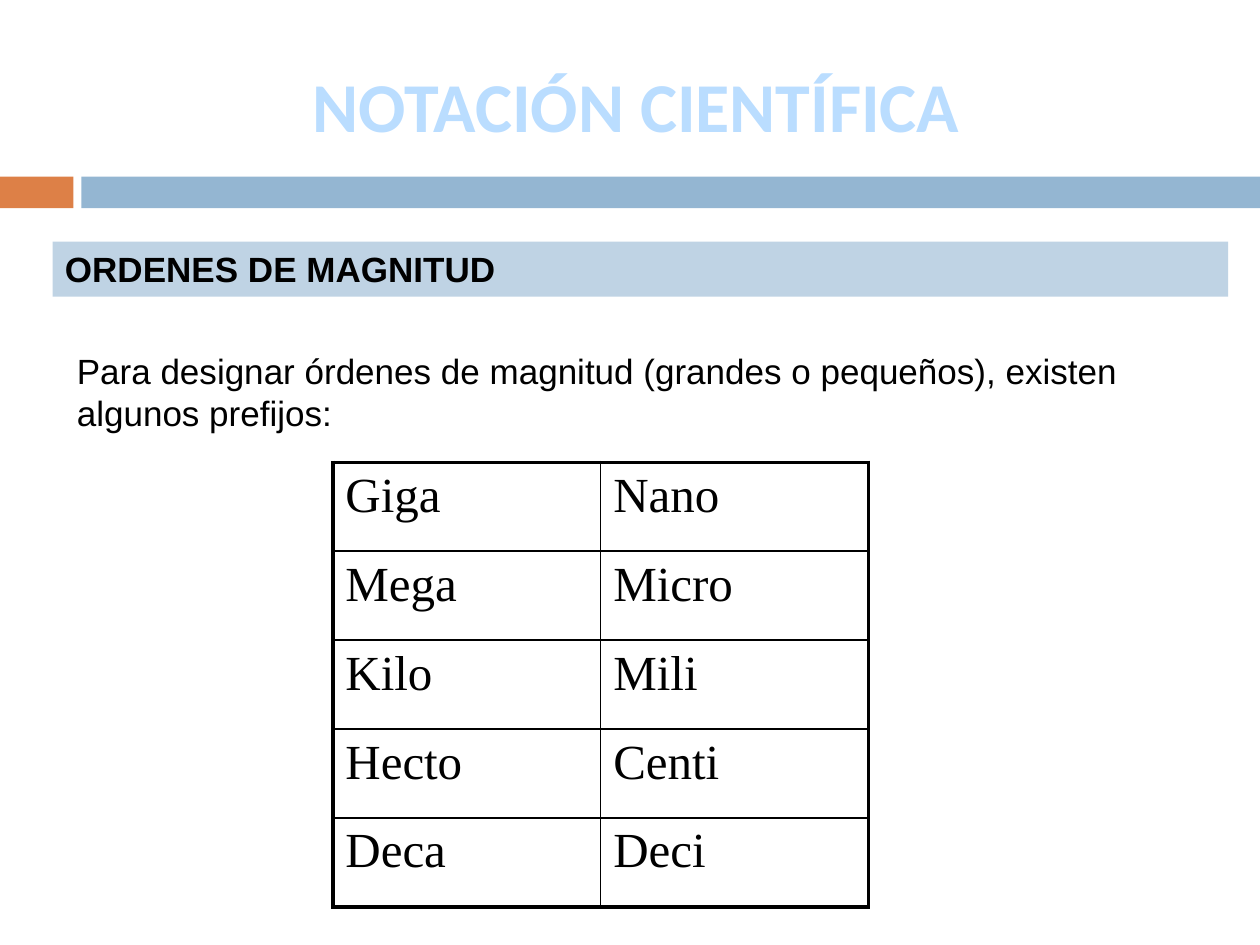
from lxml import etree
from pptx import Presentation
from pptx.dml.color import RGBColor
from pptx.enum.shapes import MSO_SHAPE
from pptx.enum.text import MSO_ANCHOR, PP_ALIGN
from pptx.oxml.ns import qn
from pptx.util import Cm, Pt

RECT = MSO_SHAPE.RECTANGLE
LEFT, CENTER = PP_ALIGN.LEFT, PP_ALIGN.CENTER
TOP, MIDDLE = MSO_ANCHOR.TOP, MSO_ANCHOR.MIDDLE

BLACK = RGBColor(0x00, 0x00, 0x00)
WHITE = RGBColor(0xFF, 0xFF, 0xFF)
ORANGE = RGBColor(0xDD, 0x80, 0x47)
BLUE = RGBColor(0x94, 0xB6, 0xD2)
PALE = RGBColor(0xBF, 0xD3, 0xE4)
SKY = RGBColor(0xBA, 0xDD, 0xFF)

# left, top, width, height in cm
BARS = [
    ((0, 3.56, 1.48, 0.64), ORANGE),
    ((1.64, 3.56, 23.76, 0.64), BLUE),
]
TITLE_FONT = {"name": "Calibri", "size": Pt(40), "bold": True}
HEAD_FONT = {"name": "Arial", "size": Pt(20), "bold": True}
BODY_FONT = {"name": "Arial", "size": Pt(20)}
CELL_FONT = {"name": "Times New Roman", "size": Pt(28)}
TEXTS = [
    ("NOTACIÓN CIENTÍFICA", (1.5, 0.74, 22.65, 2.74),
     TITLE_FONT, SKY, None, CENTER, MIDDLE),
    ("ORDENES DE MAGNITUD", (1.06, 4.87, 23.7, 1.11),
     HEAD_FONT, BLACK, PALE, LEFT, TOP),
    ("Para designar órdenes de magnitud (grandes o pequeños), "
     "existen algunos prefijos:", (1.3, 6.93, 23.01, 1.96),
     BODY_FONT, BLACK, WHITE, LEFT, TOP),
]
PREFIXES = [
    ("Giga", "Nano"),
    ("Mega", "Micro"),
    ("Kilo", "Mili"),
    ("Hecto", "Centi"),
    ("Deca", "Deci"),
]
GRID = (6.71, 9.32, 10.8, 8.96)
THICK, THIN = Pt(2.25), Pt(1)


def style(para, font, color):
    for key, value in font.items():
        setattr(para.font, key, value)
    para.font.color.rgb = color


def add_bar(slide, box, fill):
    bar = slide.shapes.add_shape(RECT, *map(Cm, box))
    bar.shadow.inherit = False
    bar.fill.solid()
    bar.fill.fore_color.rgb = fill
    bar.line.fill.background()


def add_text(slide, text, box, font, color, fill, align, anchor):
    shape = slide.shapes.add_textbox(*map(Cm, box))
    if fill is not None:
        shape.fill.solid()
        shape.fill.fore_color.rgb = fill
    frame = shape.text_frame
    frame.word_wrap = True
    frame.vertical_anchor = anchor
    frame.text = text
    para = frame.paragraphs[0]
    para.alignment = align
    style(para, font, color)


def add_edges(cell, widths):
    """Draw the cell borders; they must stand before the fill in the XML."""
    props = cell._tc.get_or_add_tcPr()
    for spot, (tag, width) in enumerate(widths.items()):
        line = etree.Element(qn("a:" + tag), w=str(width))
        fill = etree.SubElement(line, qn("a:solidFill"))
        etree.SubElement(fill, qn("a:srgbClr"), val=str(BLACK))
        props.insert(spot, line)


def add_grid(slide, rows, box):
    count, wide = len(rows), len(rows[0])
    left, top, width, height = map(Cm, box)
    table = slide.shapes.add_table(
        count, wide, left, top, width, height).table
    for row in table.rows:
        row.height = height // count
    for r, words in enumerate(rows):
        for c, word in enumerate(words):
            cell = table.cell(r, c)
            cell.text = word
            style(cell.text_frame.paragraphs[0], CELL_FONT, BLACK)
            cell.fill.solid()
            cell.fill.fore_color.rgb = WHITE
            outer = {"lnL": c == 0, "lnR": c == wide - 1,
                     "lnT": r == 0, "lnB": r == count - 1}
            add_edges(cell, {tag: THICK if edge else THIN
                             for tag, edge in outer.items()})


def main():
    deck = Presentation()
    deck.slide_width, deck.slide_height = Cm(25.4), Cm(19.05)
    slide = deck.slides.add_slide(deck.slide_layouts[6])
    for bar in BARS:
        add_bar(slide, *bar)
    for text in TEXTS:
        add_text(slide, *text)
    add_grid(slide, PREFIXES, GRID)
    deck.save("out.pptx")


if __name__ == "__main__":
    main()
